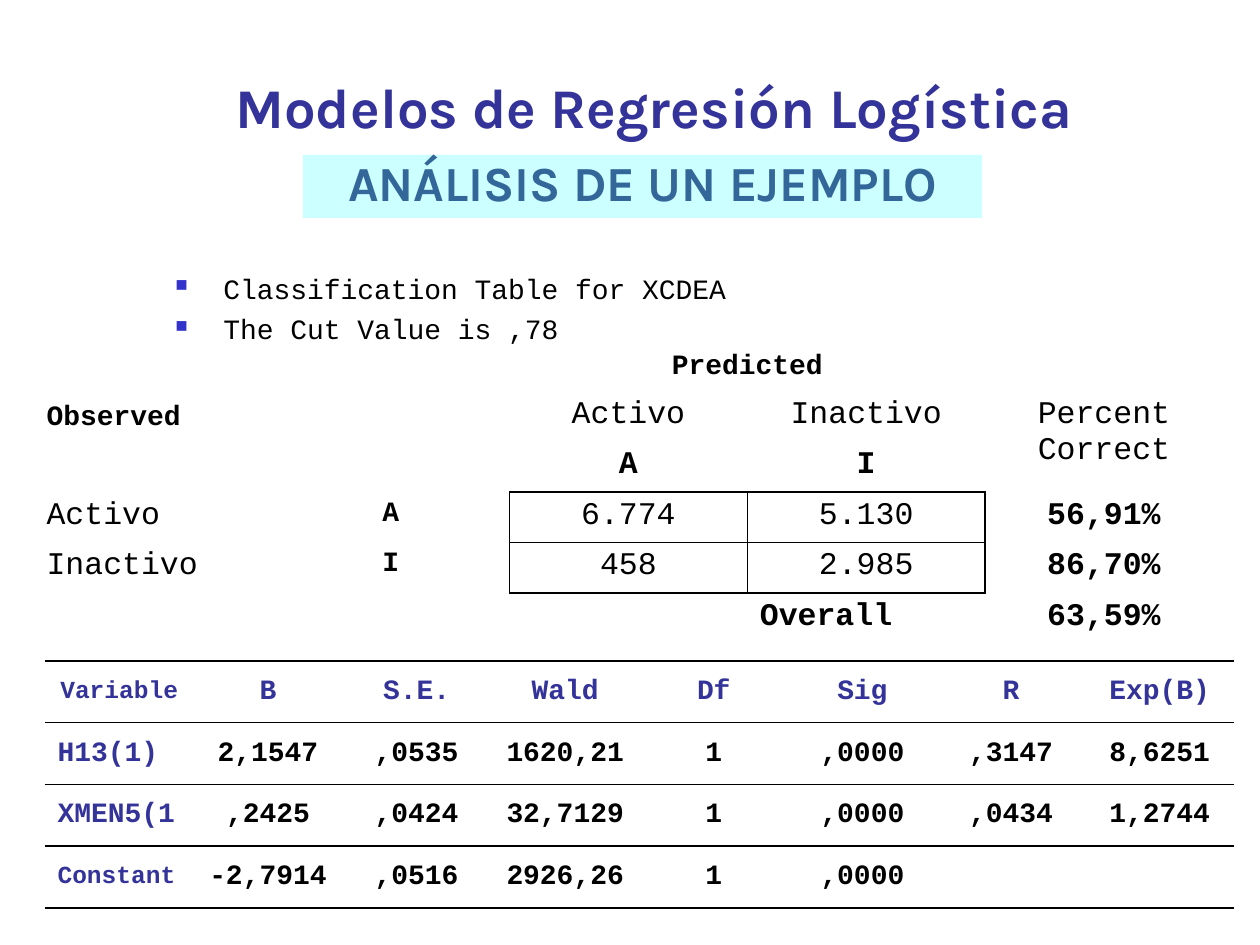
from lxml import etree
from pptx import Presentation
from pptx import util as u
from pptx.dml.color import RGBColor
from pptx.enum import shapes, text
from pptx.oxml.ns import qn

SCALE = 914400 / 126
MONO, SANS = "Courier New", "Karla"
BLACK, INDIGO, STEEL, AQUA, BULLET = "000000", "333399", "336699", "CCFFFF", "3333CC"
LEFT, CENTER = text.PP_ALIGN.LEFT, text.PP_ALIGN.CENTER
TOP, MIDDLE = text.MSO_ANCHOR.TOP, text.MSO_ANCHOR.MIDDLE
PLAIN_STYLE = "{2D5ABB26-0587-4C30-8999-92F81FD0307C}"


def px(length):
    return u.Emu(round(length * SCALE))


def rgb(value):
    return RGBColor.from_string(value)


def write(paragraph, words, size, color=BLACK, bold=False, align=LEFT, face=MONO):
    paragraph.text = words
    paragraph.alignment = align
    font = paragraph.font
    font.name, font.size, font.bold = face, u.Pt(size), bold
    font.color.rgb = rgb(color)


def add_bullet(paragraph):
    props = paragraph._p.get_or_add_pPr()
    props.set("marL", str(px(48)))
    props.set("indent", str(-px(48)))
    tint = etree.SubElement(props, qn("a:buClr"))
    etree.SubElement(tint, qn("a:srgbClr"), val=BULLET)
    etree.SubElement(props, qn("a:buSzPct"), val="60000")
    etree.SubElement(props, qn("a:buChar"), char="■")


def rule_cell(cell, sides):
    props = cell._tc.get_or_add_tcPr()
    for side in "LRTB":
        if side in sides:
            line = etree.SubElement(props, qn("a:ln" + side), w=str(u.Pt(1)))
            fill = etree.SubElement(line, qn("a:solidFill"))
            etree.SubElement(fill, qn("a:srgbClr"), val=BLACK)


def add_plain_table(slide, rows, cols, box):
    table = slide.shapes.add_table(rows, cols, *map(px, box)).table
    table.first_row = table.horz_banding = False
    table._tbl.tblPr.find(qn("a:tableStyleId")).text = PLAIN_STYLE
    return table


def fill_cell(cell, words, size, color=BLACK, bold=False, align=CENTER, anchor=TOP, sides=""):
    rule_cell(cell, sides)
    cell.fill.background()
    cell.vertical_anchor = anchor
    if words:
        write(cell.text_frame.paragraphs[0], words, size, color, bold, align)
    else:
        cell.margin_top = cell.margin_bottom = 0


def add_heading(slide, left, top, width, height):
    title = slide.shapes.add_textbox(*map(px, (left, top, width, height)))
    title.text_frame.word_wrap = False
    write(title.text_frame.paragraphs[0], "Modelos de Regresión Logística",
          32, INDIGO, True, face=SANS)

    banner = slide.shapes.add_shape(
        shapes.MSO_SHAPE.RECTANGLE, *map(px, (left + 80, top + 89, 679, 63)))
    banner.shadow.inherit = False
    banner.fill.solid()
    banner.fill.fore_color.rgb = rgb(AQUA)
    banner.line.fill.background()
    banner.text_frame.word_wrap = False
    subtitle = banner.text_frame.paragraphs[0]
    subtitle.line_spacing = 0.85
    write(subtitle, "ANÁLISIS DE UN EJEMPLO", 28, STEEL, True, CENTER, SANS)


def add_notes_list(slide, left, top, width, height):
    frame = slide.shapes.add_textbox(*map(px, (left, top, width, height))).text_frame
    frame.word_wrap = True
    for index, words in enumerate(["Classification Table for XCDEA", "The Cut Value is ,78"]):
        item = frame.add_paragraph() if index else frame.paragraphs[0]
        item.space_before = u.Pt(4)
        add_bullet(item)
        write(item, words, 16)


def add_classification(slide, left, top, width, height):
    rows = [
        ["Observed", "", "Predicted", "", ""],
        ["", "", "Activo", "Inactivo", "Percent Correct"],
        ["", "", "A", "I", ""],
        ["Activo", "A", "6.774", "5.130", "56,91%"],
        ["Inactivo", "I", "458", "2.985", "86,70%"],
        ["", "", "", "Overall", "63,59%"],
    ]
    small_bold = {(0, 0), (0, 2), (3, 1), (4, 1)}
    large_bold = {(2, 2), (2, 3), (3, 4), (4, 4), (5, 3), (5, 4)}
    sides = {(3, 2): "LRTB", (3, 3): "LRTB", (4, 2): "LRT", (4, 3): "LRTB"}
    merges = [((0, 0), (2, 0)), ((0, 1), (2, 1)), ((0, 2), (0, 3)),
              ((1, 4), (2, 4)), ((5, 0), (5, 2))]

    table = add_plain_table(slide, 6, 5, (left, top, width, height))
    table.rows[0].height = px(47)
    for start, end in merges:
        table.cell(*start).merge(table.cell(*end))
    for r, row in enumerate(rows):
        for c, words in enumerate(row):
            spot = (r, c)
            fill_cell(table.cell(r, c), words, 16 if spot in small_bold else 18,
                      bold=spot in small_bold | large_bold,
                      align=LEFT if c == 0 or words == "Overall" else CENTER,
                      anchor=MIDDLE if r == 0 else TOP, sides=sides.get(spot, ""))


def add_coefficients(slide, left, top, width, height):
    rows = [
        ["Variable", "B", "S.E.", "Wald", "Df", "Sig", "R", "Exp(B)"],
        ["H13(1)", "2,1547", ",0535", "1620,21", "1", ",0000", ",3147", "8,6251"],
        ["XMEN5(1", ",2425", ",0424", "32,7129", "1", ",0000", ",0434", "1,2744"],
        ["Constant", "-2,7914", ",0516", "2926,26", "1", ",0000", "", ""],
    ]
    table = add_plain_table(slide, 4, 8, (left, top, width, height))
    for r, row in enumerate(rows):
        for c, words in enumerate(row):
            fill_cell(table.cell(r, c), words,
                      14 if words in ("Variable", "Constant") else 16,
                      INDIGO if r == 0 or c == 0 else BLACK, True,
                      LEFT if c == 0 and r else CENTER, MIDDLE, "TB")


def main():
    deck = Presentation()
    deck.slide_width, deck.slide_height = px(1260), px(945)
    slide = deck.slides.add_slide(deck.slide_layouts[6])
    add_heading(slide, 223, 66, 910, 79)
    add_notes_list(slide, 163, 265, 1003, 76)
    add_classification(slide, 34, 344, 1189, 302)
    add_coefficients(slide, 45, 661, 1189, 247)
    deck.save("out.pptx")


if __name__ == "__main__":
    main()
